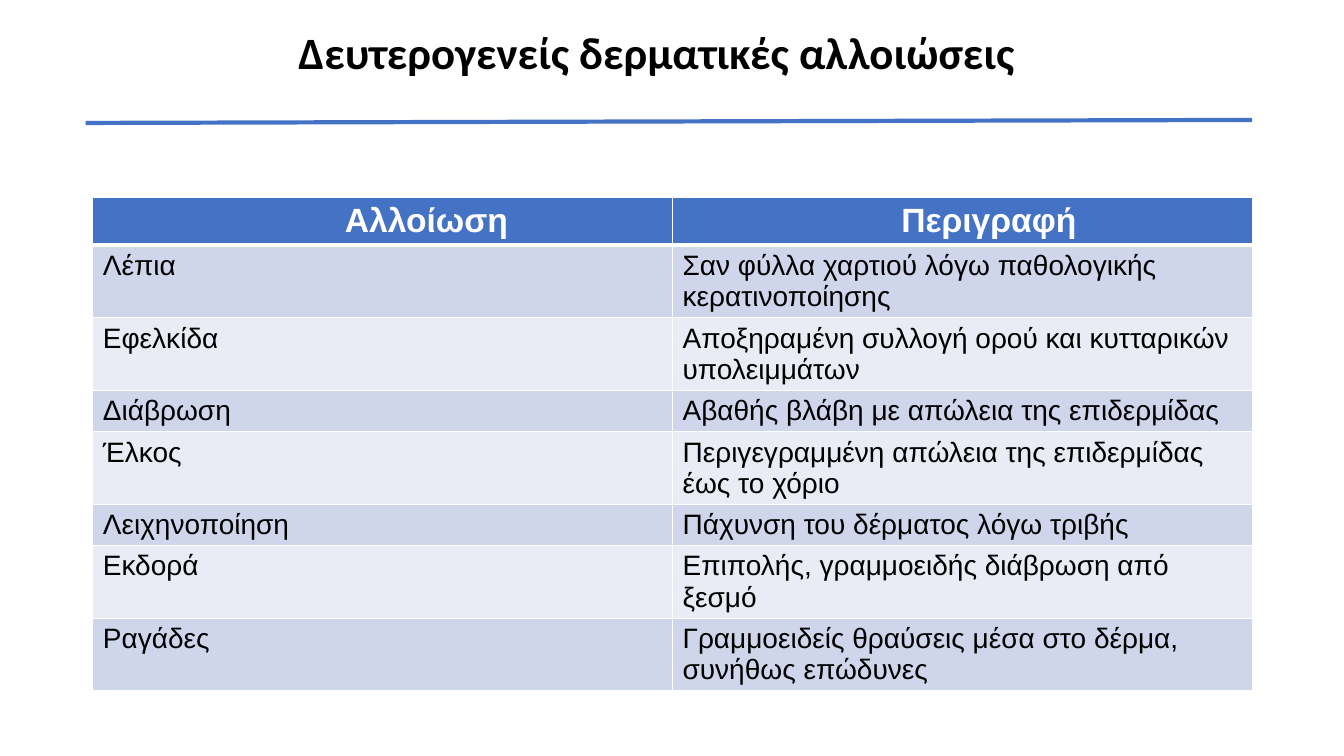
from pptx import Presentation
from pptx.dml.color import RGBColor
from pptx.enum.text import MSO_ANCHOR, PP_ALIGN
from pptx.oxml.ns import qn
from pptx.util import Inches, Pt
from lxml import etree

MIDDLE = MSO_ANCHOR.MIDDLE
LEFT = PP_ALIGN.LEFT
BLUE = RGBColor(0x44, 0x72, 0xC4)
DARK_BAND = RGBColor(0xCF, 0xD5, 0xEA)
LIGHT_BAND = RGBColor(0xE9, 0xEB, 0xF5)
WHITE = RGBColor(0xFF, 0xFF, 0xFF)
BLACK = RGBColor(0x00, 0x00, 0x00)

TITLE = "Δευτερογενείς δερματικές αλλοιώσεις"
HEADERS = ("Αλλοίωση", "Περιγραφή")
HEADER_INDENTS = (2.5, 2.27)
LESIONS = (
    ("Λέπια", "Σαν φύλλα χαρτιού λόγω παθολογικής κερατινοποίησης"),
    ("Εφελκίδα", "Αποξηραμένη συλλογή ορού και κυτταρικών υπολειμμάτων"),
    ("Διάβρωση", "Αβαθής βλάβη με απώλεια της επιδερμίδας"),
    ("Έλκος", "Περιγεγραμμένη απώλεια της επιδερμίδας έως το χόριο"),
    ("Λειχηνοποίηση", "Πάχυνση του δέρματος λόγω τριβής"),
    ("Εκδορά", "Επιπολής, γραμμοειδής διάβρωση από ξεσμό"),
    ("Ραγάδες", "Γραμμοειδείς θραύσεις μέσα στο δέρμα, συνήθως επώδυνες"),
)


class LesionSlide:
    """Holds the slide and its style, and adds each kind of element."""

    title_font = "Calibri"
    table_font = "Arial"

    def __init__(self, deck):
        self.page = deck.slides.add_slide(deck.slide_layouts[5])

    def style(self, paragraph, name, size, color, bold):
        font = paragraph.font
        font.name, font.size, font.bold = name, Pt(size), bold
        font.color.rgb = color

    def title(self, text):
        box = self.page.shapes.title
        box.left, box.top = Inches(1.11), Inches(0.11)
        box.width, box.height = Inches(11.5), Inches(0.88)
        frame = box.text_frame
        frame.text = text
        frame.vertical_anchor = MIDDLE
        frame.margin_left = Inches(1.85)
        paragraph = frame.paragraphs[0]
        paragraph.alignment = LEFT
        paragraph.line_spacing = 0.9
        self.style(paragraph, self.title_font, 32, BLACK, True)

    def rule(self, start, end):
        points = [Inches(length) for length in start + end]
        line = self.page.shapes.add_connector(1, *points)
        line.line.color.rgb = BLUE
        line.line.width = Pt(3)
        etree.SubElement(line._element.spPr, qn("a:effectLst"))

    def borders(self, cell, bottom):
        properties = cell._tc.get_or_add_tcPr()
        widths = {"a:lnL": 1, "a:lnR": 1, "a:lnT": 1, "a:lnB": bottom}
        for position, (tag, width) in enumerate(widths.items()):
            edge = etree.Element(qn(tag), w=str(Pt(width)))
            fill = etree.SubElement(edge, qn("a:solidFill"))
            etree.SubElement(fill, qn("a:srgbClr"), val=str(WHITE))
            properties.insert(position, edge)

    def cell(self, cell, text, fill, size, color, bold, bottom=1):
        cell.text = text
        cell.fill.solid()
        cell.fill.fore_color.rgb = fill
        self.borders(cell, bottom)
        self.style(cell.text_frame.paragraphs[0], self.table_font, size, color, bold)

    def table(self, headers, indents, rows):
        count = len(rows) + 1
        table = self.page.shapes.add_table(
            count, len(headers), Inches(0.92), Inches(1.96),
            Inches(11.5), Inches(0.41 * count)).table
        for column, (header, indent) in enumerate(zip(headers, indents)):
            cell = table.cell(0, column)
            self.cell(cell, header, BLUE, 24, WHITE, True, bottom=3)
            cell.margin_left = Inches(indent)
        for number, row in enumerate(rows, 1):
            band = DARK_BAND if number % 2 else LIGHT_BAND
            for column, text in enumerate(row):
                self.cell(table.cell(number, column), text, band, 20, BLACK, False)


def main():
    deck = Presentation()
    deck.slide_width, deck.slide_height = Inches(13.33), Inches(7.5)
    slide = LesionSlide(deck)
    slide.title(TITLE)
    slide.table(HEADERS, HEADER_INDENTS, LESIONS)
    slide.rule((0.85, 1.22), (12.42, 1.19))
    deck.save("out.pptx")


if __name__ == "__main__":
    main()
